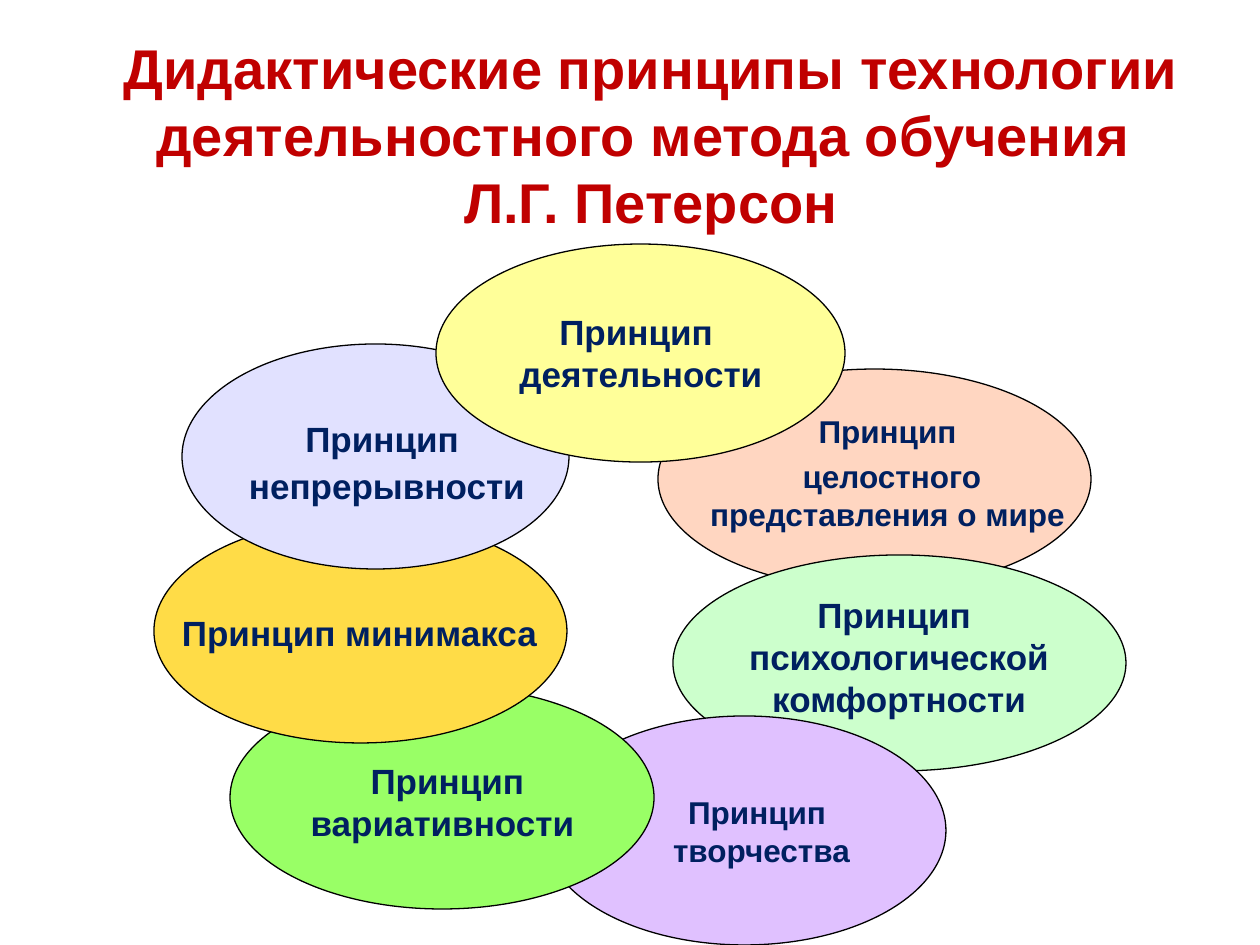
from dataclasses import dataclass

from pptx import Presentation
from pptx.dml.color import RGBColor
from pptx.enum.shapes import MSO_SHAPE
from pptx.enum.text import MSO_ANCHOR, MSO_AUTO_SIZE, PP_ALIGN
from pptx.util import Emu, Pt

PX_PER_INCH = 126
FONT = "Arial"
COLORS = {
    "title": "C00000", "label": "002060", "outline": "000000",
    "peach": "FFD6C1", "mint": "CCFFCC", "lilac": "E0C1FF", "green": "99FF66",
    "gold": "FFDC47", "lavender": "E1E1FF", "yellow": "FFFF99",
}


@dataclass(frozen=True)
class Area:
    left: int
    top: int
    width: int
    height: int


@dataclass(frozen=True)
class Principle:
    color: str
    oval: Area
    label: Area
    lines: tuple[str, ...]
    size: int = 20
    before: int = 0
    after: int = 0


PRINCIPLES = (
    Principle("peach", Area(658, 369, 433, 220), Area(664, 406, 447, 220),
              ("Принцип", " целостного представления о мире"), size=18, before=4),
    Principle("mint", Area(673, 555, 453, 216), Area(707, 587, 384, 203),
              ("Принцип ", "психологической комфортности")),
    Principle("lilac", Area(543, 716, 403, 229), Area(606, 787, 311, 124),
              ("Принцип ", "творчества"), size=18),
    Principle("green", Area(230, 686, 424, 223), Area(231, 753, 423, 155),
              (" Принцип вариативности",)),
    Principle("gold", Area(154, 519, 413, 224), Area(166, 605, 387, 145),
              ("Принцип минимакса",)),
    Principle("lavender", Area(182, 344, 387, 225), Area(193, 411, 388, 137),
              ("Принцип ", "непрерывности"), after=3),
    Principle("yellow", Area(436, 244, 409, 218), Area(491, 304, 300, 171),
              ("Принцип ", "деятельности")),
)


def px(value: int) -> Emu:
    """Turn pixels into EMU."""
    return Emu(round(value * 914400 / PX_PER_INCH))


def bounds(area: Area) -> tuple[Emu, Emu, Emu, Emu]:
    """Give the area as left, top, width and height in EMU."""
    return px(area.left), px(area.top), px(area.width), px(area.height)


def rgb(name: str) -> RGBColor:
    """Look up a named colour."""
    return RGBColor.from_string(COLORS[name])


def write(box, lines: tuple[str, ...], *, size: int, color: str,
          anchor=MSO_ANCHOR.TOP, before: int = 0, after: int = 0) -> None:
    """Fill a box with bold centred paragraphs."""
    frame = box.text_frame
    frame.word_wrap = True
    frame.auto_size = MSO_AUTO_SIZE.NONE
    frame.vertical_anchor = anchor
    for index, line in enumerate(lines):
        para = frame.add_paragraph() if index else frame.paragraphs[0]
        para.alignment = PP_ALIGN.CENTER
        para.space_before = Pt(before if index else 0)
        para.space_after = Pt(after)
        span = para.add_run()
        span.text = line
        span.font.name = FONT
        span.font.size = Pt(size)
        span.font.bold = True
        span.font.color.rgb = rgb(color)


def draw_principle(page, principle: Principle) -> None:
    """Draw one oval and its label."""
    oval = page.shapes.add_shape(MSO_SHAPE.OVAL, *bounds(principle.oval))
    oval.shadow.inherit = False
    oval.fill.solid()
    oval.fill.fore_color.rgb = rgb(principle.color)
    oval.line.color.rgb = rgb("outline")
    oval.line.width = Pt(0.75)
    label = page.shapes.add_textbox(*bounds(principle.label))
    write(label, principle.lines, size=principle.size, color="label",
          before=principle.before, after=principle.after)


def main() -> None:
    """Build and save the slide."""
    deck = Presentation()
    deck.slide_width, deck.slide_height = px(1260), px(945)
    page = deck.slides.add_slide(deck.slide_layouts[5])
    title = page.shapes.title
    title.left, title.top, title.width, title.height = bounds(Area(84, 55, 1134, 158))
    write(title,
          ("Дидактические принципы технологии деятельностного метода обучения ",
           "Л.Г. Петерсон"),
          size=32, color="title", anchor=MSO_ANCHOR.MIDDLE)
    for principle in PRINCIPLES:
        draw_principle(page, principle)
    deck.save("out.pptx")


if __name__ == "__main__":
    main()
